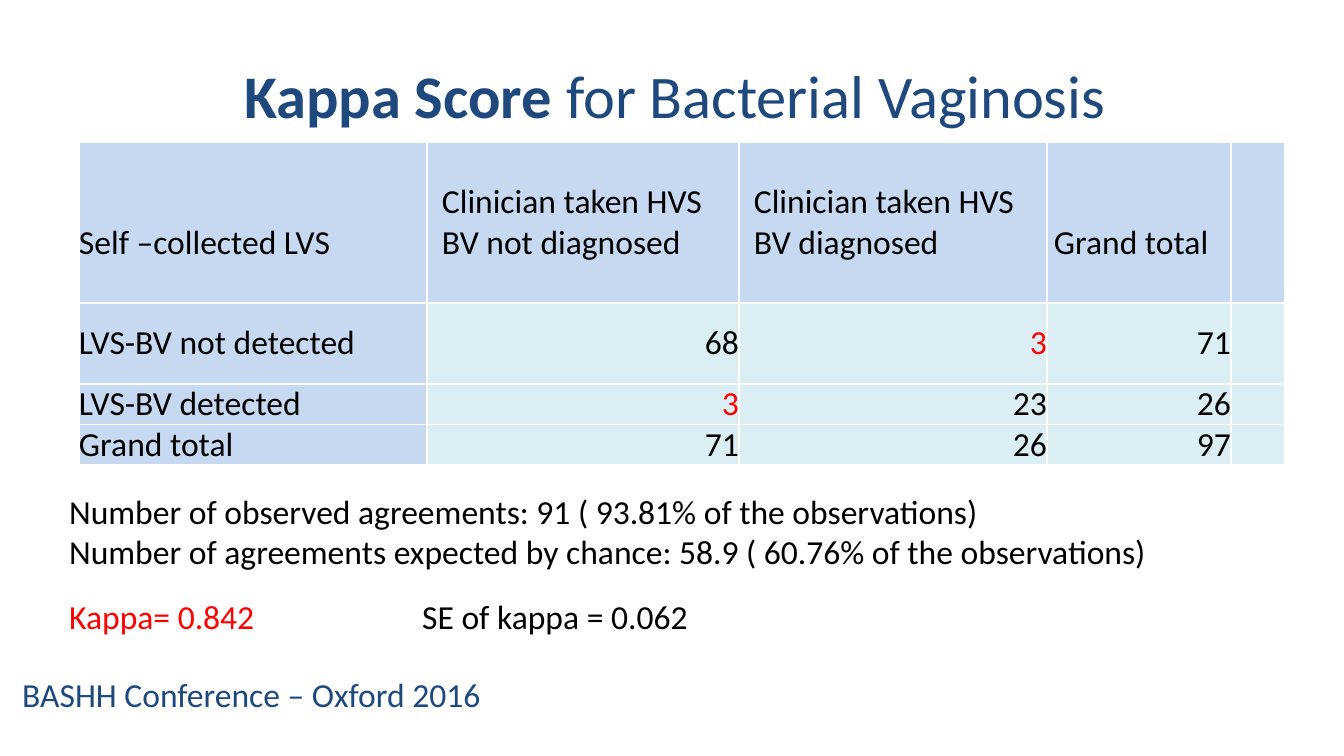
from lxml.etree import SubElement
from pptx import Presentation
from pptx.dml.color import RGBColor
from pptx.enum.text import MSO_ANCHOR, PP_ALIGN
from pptx.oxml.ns import qn
from pptx.util import Pt

COLORS = {
    "navy": "1F497D",
    "black": "000000",
    "red": "FF0000",
    "white": "FFFFFF",
    "header": "C6D9F1",
    "body": "DBEEF4",
}
FONT = "Calibri"
PX = 9144000 / 1344

TITLE = [[("Kappa Score ", "navy", True), ("for Bacterial Vaginosis", "navy", False)]]
FOOTER = [[("BASHH Conference – Oxford 2016", "navy", False)]]
SUMMARY = [
    [("Number of observed agreements: 91 ( 93.81% of the observations)", "black", False)],
    [("Number of agreements expected by chance: 58.9 ( 60.76% of the observations)", "black", False)],
    [("Kappa= 0.842", "red", False), ("\tSE of kappa = 0.062", "black", False)],
]
TABLE = [
    ["Self –collected LVS", "Clinician taken HVS\nBV not diagnosed",
     "Clinician taken HVS\nBV diagnosed", "Grand total", ""],
    ["LVS-BV not detected", "68", "3", "71", ""],
    ["LVS-BV detected", "3", "23", "26", ""],
    ["Grand total", "71", "26", "97", ""],
]
COL_WIDTHS = [348, 312, 308, 184, 54]
ROW_HEIGHTS = [161, 81, 40, 40]
HEADER_INDENTS = [0, 15, 15, 7, 0]
LINE_HEIGHT = 41
DISAGREEMENTS = {(1, 2), (2, 1)}


def px(n):
    return round(n * PX)


def rgb(name):
    return RGBColor.from_string(COLORS[name])


def style(font, size, color, bold=False):
    font.name = FONT
    font.size = Pt(size)
    font.bold = bold
    font.color.rgb = rgb(color)


def add_text(s, box, paragraphs, size=18, align=PP_ALIGN.LEFT, anchor=MSO_ANCHOR.TOP):
    tf = s.shapes.add_textbox(*map(px, box)).text_frame
    tf.word_wrap = True
    tf.vertical_anchor = anchor
    for i, runs in enumerate(paragraphs):
        p = tf.add_paragraph() if i else tf.paragraphs[0]
        p.alignment = align
        for text, color, bold in runs:
            r = p.add_run()
            r.text = text
            style(r.font, size, color, bold)
    return tf


def add_borders(cell):
    tcPr = cell._tc.get_or_add_tcPr()
    for side in ("lnL", "lnR", "lnT", "lnB"):
        ln = SubElement(tcPr, qn(f"a:{side}"), w=str(Pt(1)))
        fill = SubElement(ln, qn("a:solidFill"))
        SubElement(fill, qn("a:srgbClr"), val=COLORS["white"])


def fill_cell(cell, row, col, text):
    cell.margin_left = cell.margin_right = cell.margin_top = cell.margin_bottom = 0
    cell.vertical_anchor = MSO_ANCHOR.MIDDLE
    if row == 0:
        cell.margin_left = px(HEADER_INDENTS[col])
        if "\n" not in text:
            cell.margin_top = px(LINE_HEIGHT)
    add_borders(cell)
    cell.fill.solid()
    cell.fill.fore_color.rgb = rgb("header" if row == 0 or col == 0 else "body")
    cell.text_frame.text = text
    for p in cell.text_frame.paragraphs:
        p.alignment = PP_ALIGN.RIGHT if row and col else PP_ALIGN.LEFT
        for r in p.runs:
            style(r.font, 18, "red" if (row, col) in DISAGREEMENTS else "black")


def add_results(s, left, top):
    size = sum(COL_WIDTHS), sum(ROW_HEIGHTS)
    table = s.shapes.add_table(
        len(TABLE), len(COL_WIDTHS), *map(px, (left, top, *size))).table
    for column, width in zip(table.columns, COL_WIDTHS):
        column.width = px(width)
    for row, height in zip(table.rows, ROW_HEIGHTS):
        row.height = px(height)
    for i, texts in enumerate(TABLE):
        for j, text in enumerate(texts):
            fill_cell(table.cell(i, j), i, j, text)


def main():
    prs = Presentation()
    prs.slide_width, prs.slide_height = px(1344), px(756)
    s = prs.slides.add_slide(prs.slide_layouts[6])

    add_text(s, (9, 667, 642, 93), FOOTER)
    add_text(s, (70, 56, 1210, 76), TITLE, 32.4, PP_ALIGN.CENTER, MSO_ANCHOR.MIDDLE)

    p = add_text(s, (56, 484, 1237, 206), SUMMARY).paragraphs[-1]
    p.space_before = Pt(13)
    tabs = SubElement(p._p.get_or_add_pPr(), qn("a:tabLst"))
    SubElement(tabs, qn("a:tab"), pos=str(px(353)), algn="l")

    add_results(s, 79, 142)
    prs.save("out.pptx")


if __name__ == "__main__":
    main()
